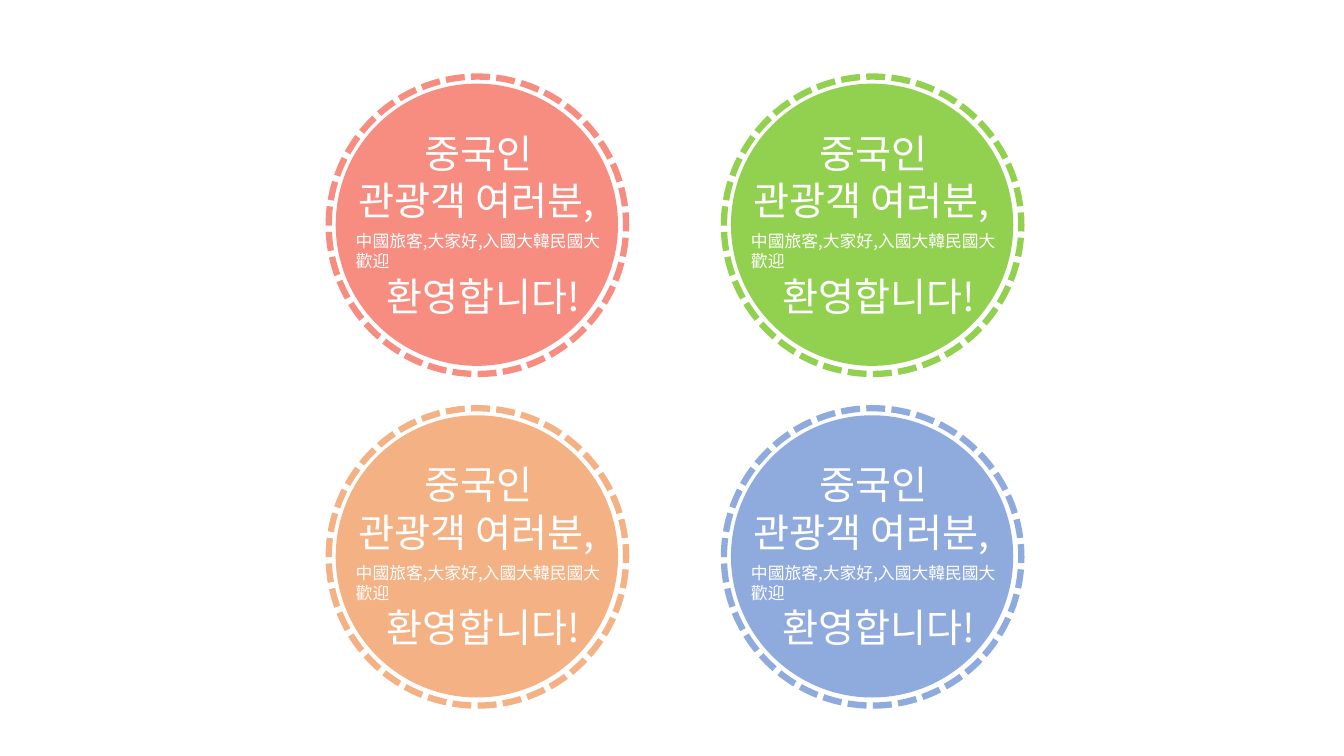
import dataclasses

import lxml.etree
import pptx
import pptx.dml.color
import pptx.enum.dml
import pptx.enum.shapes
import pptx.enum.text
import pptx.oxml.ns
import pptx.util

PX = 9144  # 100 px to the inch


@dataclasses.dataclass(frozen=True)
class Theme:
    font: str = "Noto Sans CJK KR"
    text: str = "FFFFFF"
    badges: tuple = ("F78C81", "92D050", "F4B183", "8FAADC")
    large: int = 28
    small: int = 12
    ring_width: float = 4.5


THEME = Theme()

# Grid of badges
COLUMNS = 2
LEFT, TOP = 326, 76
STEP_X, STEP_Y = 392, 329
RING, DISC = 295, 280
INSET = 7

# Greeting lines: text, offset from the badge corner, width, height, size
GREETING = (
    ("중국인", 85, 47, 160, 57, THEME.large),
    ("관광객 여러분,", 20, 94, 280, 57, THEME.large),
    ("환영합니다!", 48, 189, 236, 57, THEME.large),
    ("中國旅客,大家好,入國大韓民國大歡迎", 17, 148, 272, 30, THEME.small),
)


def rgb(value):
    return pptx.dml.color.RGBColor.from_string(value)


def box(*lengths):
    return [pptx.util.Emu(n * PX) for n in lengths]


def add_circle(group, x, y, size):
    s = group.shapes.add_shape(
        pptx.enum.shapes.MSO_SHAPE.OVAL, *box(x, y, size, size))
    s.shadow.inherit = False
    return s


def add_disc(group, x, y, color):
    s = add_circle(group, x, y, DISC)
    s.fill.solid()
    s.fill.fore_color.rgb = rgb(color)
    s.line.fill.background()


def add_ring(group, x, y, color):
    s = add_circle(group, x, y, RING)
    s.fill.background()
    s.line.color.rgb = rgb(color)
    line_format = {
        "width": pptx.util.Pt(THEME.ring_width),
        "dash_style": pptx.enum.dml.MSO_LINE.SQUARE_DOT,
    }
    for name, value in line_format.items():
        setattr(s.line, name, value)


def add_text(group, text, x, y, width, height, size):
    tf = group.shapes.add_textbox(*box(x, y, width, height)).text_frame
    tf.word_wrap = True
    tf.auto_size = pptx.enum.text.MSO_AUTO_SIZE.SHAPE_TO_FIT_TEXT
    r = tf.paragraphs[0].add_run()
    r.text = text
    for name, value in {"size": pptx.util.Pt(size), "name": THEME.font}.items():
        setattr(r.font, name, value)
    r.font.color.rgb = rgb(THEME.text)
    # East Asian glyphs take their font from a:ea
    lxml.etree.SubElement(
        r._r.get_or_add_rPr(), pptx.oxml.ns.qn("a:ea"), typeface=THEME.font)


def add_badge(slide, x, y, color):
    group = slide.shapes.add_group_shape()
    add_disc(group, x + INSET, y + INSET, color)
    add_ring(group, x, y, color)
    for text, dx, dy, width, height, size in GREETING:
        add_text(group, text, x + dx, y + dy, width, height, size)


def main():
    prs = pptx.Presentation()
    prs.slide_width, prs.slide_height = box(1333, 750)
    slide = prs.slides.add_slide(prs.slide_layouts[6])

    # One badge per colour, row by row
    for i, color in enumerate(THEME.badges):
        row, column = divmod(i, COLUMNS)
        add_badge(slide, LEFT + column * STEP_X, TOP + row * STEP_Y, color)

    prs.save("out.pptx")


if __name__ == "__main__":
    main()
